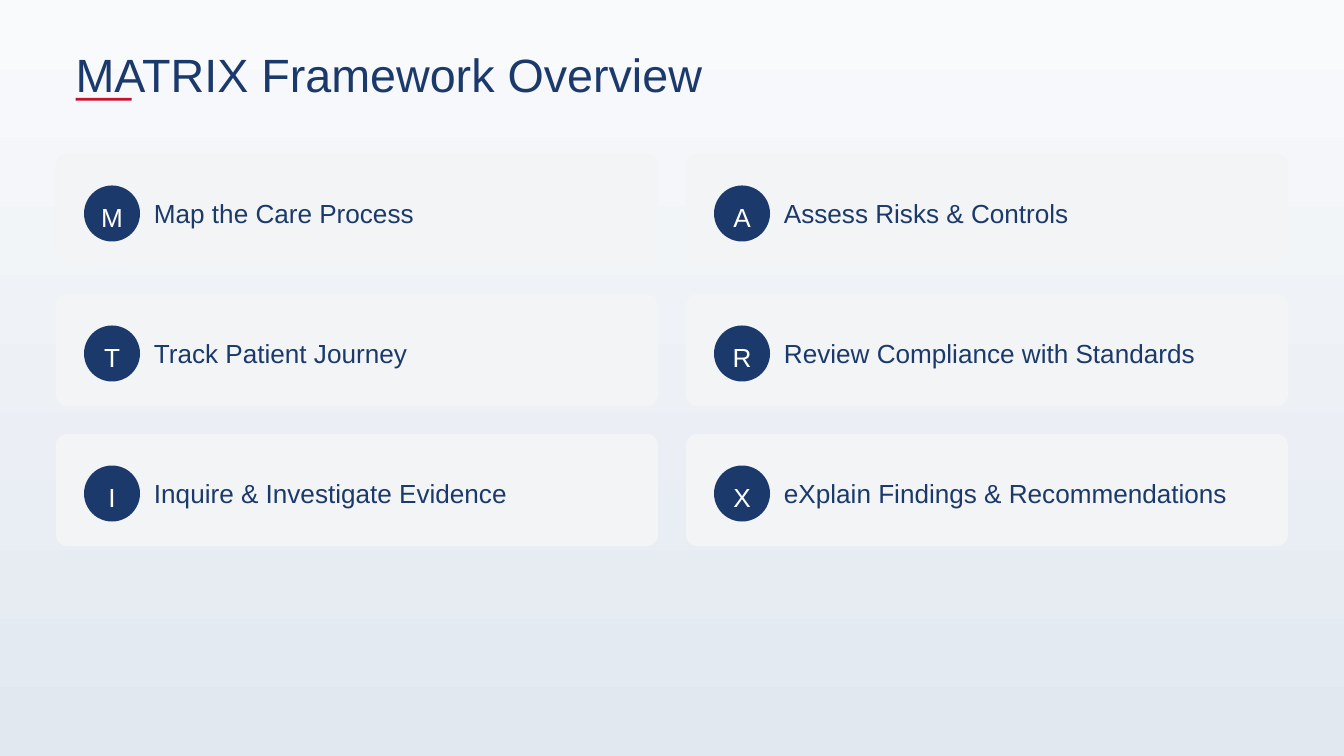
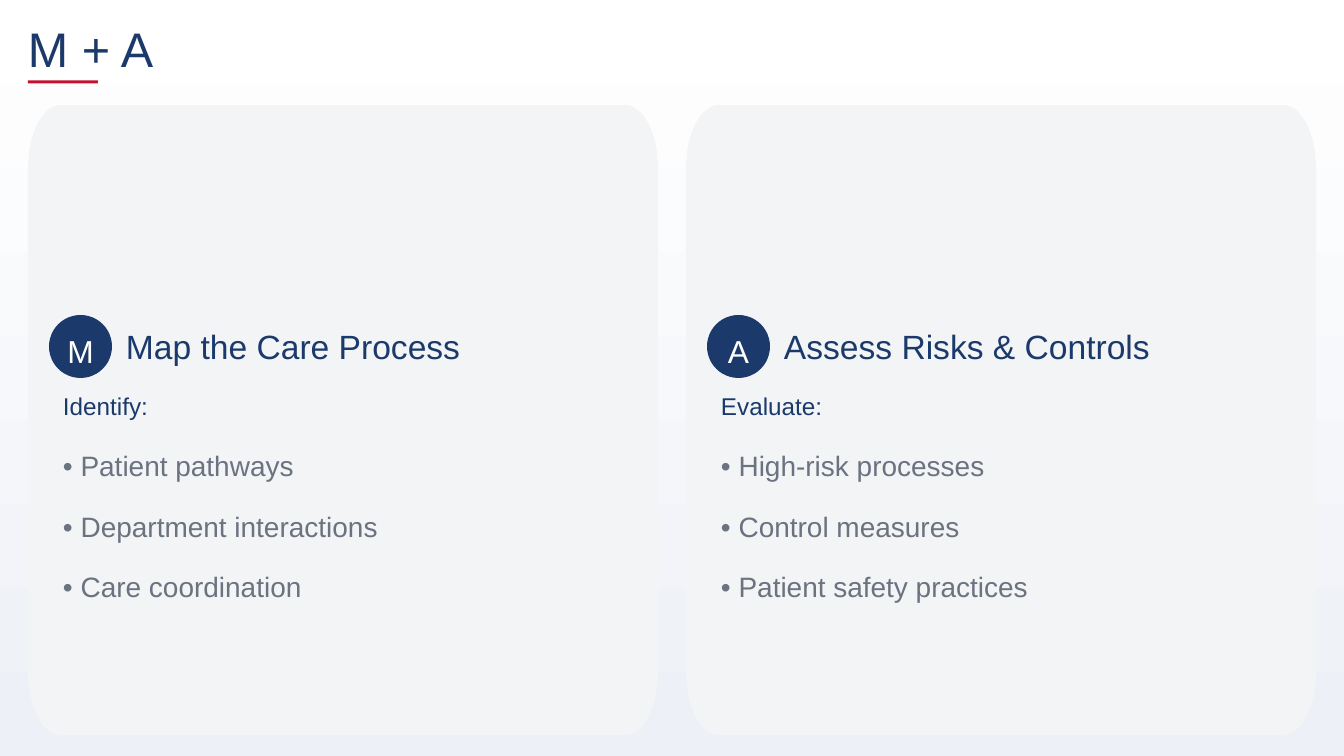
from lxml import etree
from pptx import Presentation
from pptx.dml.color import RGBColor
from pptx.enum.shapes import MSO_SHAPE
from pptx.enum.text import MSO_ANCHOR, MSO_AUTO_SIZE, PP_ALIGN
from pptx.oxml.ns import qn
from pptx.util import Pt

PX = 9525  # EMU in one px, 96 px to the inch
RIGHT_ANGLE = 90 * 60000  # in the angle unit of DrawingML
FONT = "Arial"
COLORS = {
    "navy": "1B3A6B",
    "red": "C8102E",
    "card": "F2F4F6",
    "gray": "6B7280",
    "white": "FFFFFF",
    "mist": "F8FAFC",
    "slate": "E2E8F0",
    "haze": "EDF1F7",
}

STEPS = [
    ("M", "Map the Care Process"),
    ("A", "Assess Risks & Controls"),
    ("T", "Track Patient Journey"),
    ("R", "Review Compliance with Standards"),
    ("I", "Inquire & Investigate Evidence"),
    ("X", "eXplain Findings & Recommendations"),
]
DETAILS = [
    ("Identify:", ["Patient pathways", "Department interactions", "Care coordination"]),
    ("Evaluate:", ["High-risk processes", "Control measures", "Patient safety practices"]),
]


def color(name):
    return RGBColor.from_string(COLORS[name])


def emu(*lengths):
    return [length * PX for length in lengths]


def paint(shape, fill):
    shape.shadow.inherit = False
    shape.fill.solid()
    shape.fill.fore_color.rgb = color(fill)
    shape.line.fill.background()


def add_block(shapes, kind, box, fill):
    shape = shapes.add_shape(kind, *emu(*box))
    paint(shape, fill)
    return shape


def add_text(shapes, box, lines, size, fill="navy", spacing=None, inset=0):
    text_box = shapes.add_textbox(*emu(*box))
    frame = text_box.text_frame
    frame.word_wrap = True
    frame.margin_left = frame.margin_right = inset * PX
    frame.margin_top = frame.margin_bottom = inset * PX
    frame.auto_size = MSO_AUTO_SIZE.SHAPE_TO_FIT_TEXT
    frame.text = "\n".join(lines)
    for para in frame.paragraphs:
        para.font.name = FONT
        para.font.size = Pt(size)
        para.font.color.rgb = color(fill)
        para.line_spacing = spacing
    return frame


def add_page(deck, top, bottom):
    """Blank page with a gradient from top to bottom."""
    page = deck.slides.add_slide(deck.slide_layouts[6])
    fill = page.background.fill
    fill.gradient()
    fill.gradient_angle = 270
    for stop, name in zip(fill.gradient_stops, (top, bottom)):
        stop.color.rgb = color(name)
    return page


def add_title(page, box, text, size, rule_top, rule_width):
    add_text(page.shapes, box, [text], size)
    rule = (box[0], box[1] + rule_top, rule_width, 4)
    add_block(page.shapes, MSO_SHAPE.RECTANGLE, rule, "red")


def add_badge(page, left, top, size, letter, font_size):
    """Letter in a disc; its text area starts a little above the disc."""
    shapes = page.shapes.add_group_shape().shapes
    add_block(shapes, MSO_SHAPE.OVAL, (left, top, size, size), "navy")
    rise = size // 10
    box = (left, top - rise, size, size + rise)
    frame = add_text(shapes, box, [letter], font_size, "white", 1.4, inset=6)
    frame.auto_size = MSO_AUTO_SIZE.NONE
    frame.vertical_anchor = MSO_ANCHOR.MIDDLE
    frame.paragraphs[0].alignment = PP_ALIGN.CENTER


def add_step_card(page, box, letter, name):
    left, top, width, height = box
    card = add_block(page.shapes, MSO_SHAPE.ROUNDED_RECTANGLE, box, "card")
    card.adjustments[0] = 0.1
    add_badge(page, left + 40, top + 45, 80, letter, 28)
    add_text(page.shapes, (left + 140, top + 62, width - 180, 39), [name], 28)


def add_oval_cornered_panel(page, box, radius_x, radius_y):
    """Panel with quarter-ellipse corners, outlined clockwise from the top edge."""
    left, top, width, height = box
    right, bottom = left + width, top + height
    points = [
        (left + radius_x, top), (right - radius_x, top),
        (right, top + radius_y), (right, bottom - radius_y),
        (right - radius_x, bottom), (left + radius_x, bottom),
        (left, bottom - radius_y), (left, top + radius_y),
    ]
    builder = page.shapes.build_freeform(*emu(*points[0]))
    builder.add_line_segments([emu(*point) for point in points[1:] + points[:1]])
    panel = builder.convert_to_shape()
    paint(panel, "card")

    # Every second segment cuts a corner: turn it into an arc
    segments = list(panel._element.iter(qn("a:lnTo")))
    for quarter, segment in enumerate(segments[1::2]):
        arc = etree.Element(qn("a:arcTo"))
        arc.set("wR", str(radius_x * PX))
        arc.set("hR", str(radius_y * PX))
        arc.set("stAng", str((quarter + 3) % 4 * RIGHT_ANGLE))
        arc.set("swAng", str(RIGHT_ANGLE))
        segment.getparent().replace(segment, arc)


def add_detail_card(page, box, letter, name, intro, items):
    left, top, width, height = box
    add_oval_cornered_panel(page, box, 47, 90)
    add_badge(page, left + 30, top + 300, 90, letter, 34)
    add_text(page.shapes, (left + 140, top + 316, width - 180, 58), [name], 36)
    add_text(page.shapes, (left + 50, top + 409, width - 200, 42), [intro], 26)
    lines = [f"• {item}" for item in items]
    list_box = (left + 50, top + 453, width - 100, 207)
    add_text(page.shapes, list_box, lines, 30, "gray", 1.8)


def build_overview(deck):
    page = add_page(deck, "mist", "slate")
    add_title(page, (108, 66, 993, 81), "MATRIX Framework Overview", 50, 74, 80)
    for index, (letter, name) in enumerate(STEPS):
        row, column = divmod(index, 2)
        box = (80 + 900 * column, 220 + 200 * row, 860, 160)
        add_step_card(page, box, letter, name)


def build_details(deck):
    page = add_page(deck, "white", "haze")
    add_title(page, (40, 27, 900, 84), "M + A", 52, 88, 100)
    for column, (step, detail) in enumerate(zip(STEPS, DETAILS)):
        add_detail_card(page, (40 + 940 * column, 150, 900, 900), *step, *detail)


def main():
    deck = Presentation()
    deck.slide_width, deck.slide_height = emu(1920, 1080)
    build_overview(deck)
    build_details(deck)
    deck.save("out.pptx")


if __name__ == "__main__":
    main()
